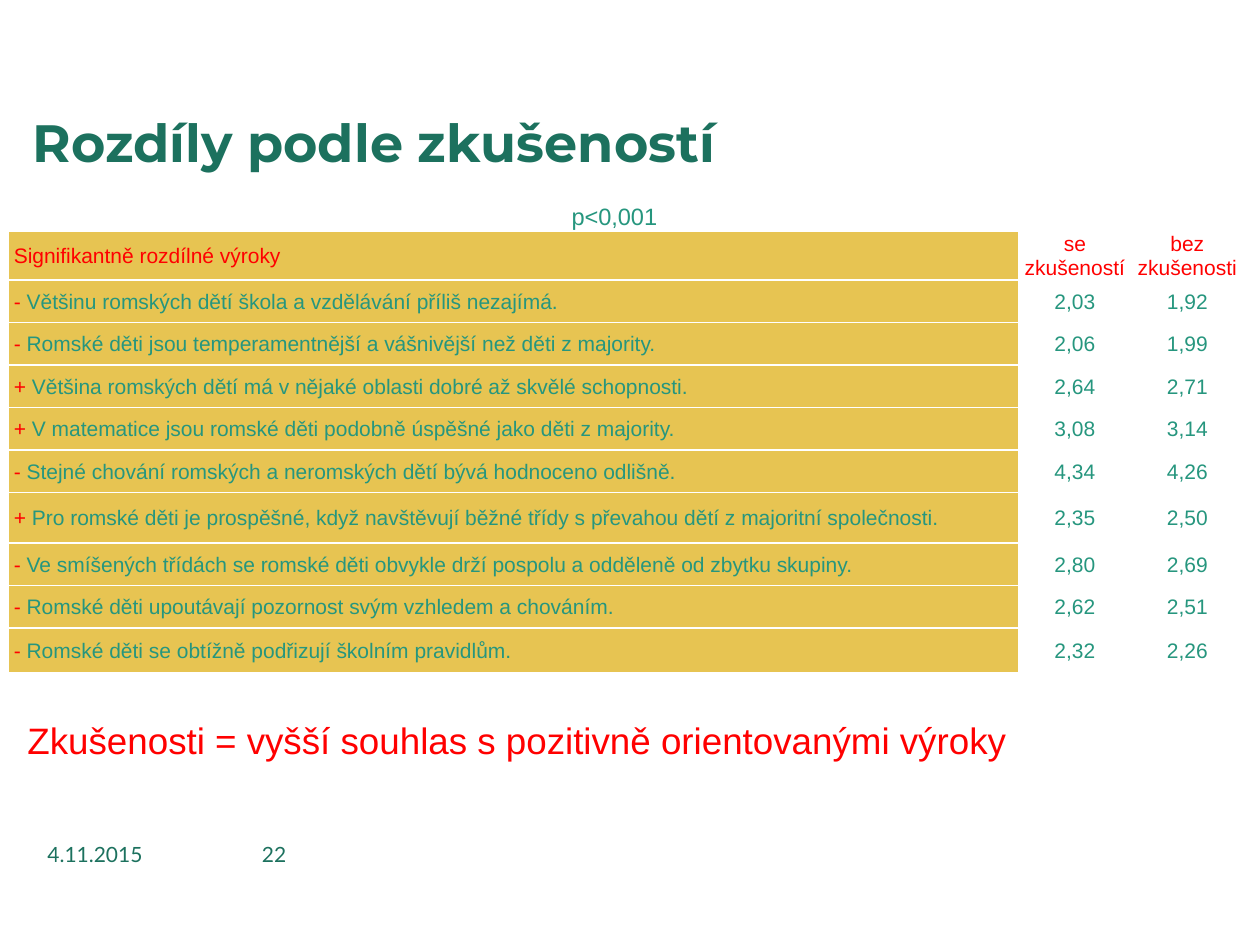
import lxml.etree
import pptx
import pptx.dml.color
import pptx.enum.text
import pptx.oxml.ns
import pptx.util

Pt = pptx.util.Pt
RGBColor = pptx.dml.color.RGBColor
ALIGN = pptx.enum.text.PP_ALIGN
MIDDLE = pptx.enum.text.MSO_ANCHOR.MIDDLE
NO_FIT = pptx.enum.text.MSO_AUTO_SIZE.NONE
qn = pptx.oxml.ns.qn

GREEN = RGBColor(0x1C, 0x71, 0x5E)
TEAL = RGBColor(0x26, 0x96, 0x7E)
RED = RGBColor(0xFF, 0x00, 0x00)
GOLD = RGBColor(0xE7, 0xC4, 0x52)
WHITE = RGBColor(0xFF, 0xFF, 0xFF)

COLUMN_WIDTHS = (577.5, 64.5, 64)
ROW_HEIGHTS = (27.5, *[24.3] * 5, 28.8, 24.3, 24.3, 25.5)
HEADER = ("Signifikantně rozdílné výroky", "se zkušeností", "bez zkušenosti")
STATEMENTS = (
    ("-", "Většinu romských dětí škola a vzdělávání příliš nezajímá.", "2,03", "1,92"),
    ("-", "Romské děti jsou temperamentnější a vášnivější než děti z majority.", "2,06", "1,99"),
    ("+", "Většina romských dětí má v nějaké oblasti dobré až skvělé schopnosti.", "2,64", "2,71"),
    ("+", "V matematice jsou romské děti podobně úspěšné jako děti z majority.", "3,08", "3,14"),
    ("-", "Stejné chování romských a neromských dětí bývá hodnoceno odlišně.", "4,34", "4,26"),
    ("+", "Pro romské děti je prospěšné, když navštěvují běžné třídy s převahou dětí "
     "z majoritní společnosti.", "2,35", "2,50"),
    ("-", "Ve smíšených třídách se romské děti obvykle drží pospolu a odděleně od zbytku skupiny.",
     "2,80", "2,69"),
    ("-", "Romské děti upoutávají pozornost svým vzhledem a chováním.", "2,62", "2,51"),
    ("-", "Romské děti se obtížně podřizují školním pravidlům.", "2,32", "2,26"),
)


def format_paragraph(p, size, color, name="Arial", bold=False, align=ALIGN.LEFT):
    """Set the alignment and font of a paragraph."""
    p.alignment = align
    p.font.size = Pt(size)
    p.font.name = name
    p.font.bold = bold
    p.font.color.rgb = color


def add_title(s, text, note):
    """Fill the title placeholder with a heading and a centred note."""
    title = s.shapes.title
    title.left, title.top, title.width, title.height = Pt(11.4), Pt(78), Pt(679.4), Pt(38)
    tf = title.text_frame
    tf.auto_size = NO_FIT
    tf.word_wrap = True
    tf.vertical_anchor = MIDDLE
    p = tf.paragraphs[0]
    p.text = text
    format_paragraph(p, 30, GREEN, "Montserrat", True)
    p = tf.add_paragraph()
    p.text = note
    p.space_before = Pt(16.5)
    format_paragraph(p, 13.5, TEAL, align=ALIGN.CENTER)


def add_text(s, text, left, top, width, height, size, color, name="Arial", align=ALIGN.LEFT):
    """Add a one-paragraph text box."""
    tf = s.shapes.add_textbox(Pt(left), Pt(top), Pt(width), Pt(height)).text_frame
    tf.word_wrap = True
    tf.vertical_anchor = MIDDLE
    p = tf.paragraphs[0]
    p.text = text
    format_paragraph(p, size, color, name, align=align)


def set_borders(cell):
    """Draw thin white cell borders."""
    properties = cell._tc.get_or_add_tcPr()
    for side in "LRTB":
        line = lxml.etree.SubElement(properties, qn(f"a:ln{side}"), w=str(Pt(1)))
        fill = lxml.etree.SubElement(line, qn("a:solidFill"))
        lxml.etree.SubElement(fill, qn("a:srgbClr"), val=str(WHITE))


def fill_cell(cell, text, color, fill, align, margin, sign=""):
    """Write and format a cell, with an optional red sign before its text."""
    set_borders(cell)
    cell.fill.solid()
    cell.fill.fore_color.rgb = fill
    cell.vertical_anchor = MIDDLE
    cell.margin_left = cell.margin_right = Pt(margin)
    cell.margin_top = cell.margin_bottom = 0
    p = cell.text_frame.paragraphs[0]
    p.line_spacing = Pt(14)
    format_paragraph(p, 12, color, align=align)
    if sign:
        r = p.add_run()
        r.text = f"{sign} "
        r.font.color.rgb = RED
    p.add_run().text = text


def add_statements(s):
    """Add the table of statements and their mean scores."""
    table = s.shapes.add_table(
        len(ROW_HEIGHTS), len(COLUMN_WIDTHS), Pt(4.5), Pt(132),
        Pt(sum(COLUMN_WIDTHS)), Pt(sum(ROW_HEIGHTS))).table
    for column, width in zip(table.columns, COLUMN_WIDTHS):
        column.width = Pt(width)
    for row, height in zip(table.rows, ROW_HEIGHTS):
        row.height = Pt(height)
    score_style = (WHITE, ALIGN.CENTER, 2)
    styles = ((GOLD, ALIGN.LEFT, 3.4), score_style, score_style)
    for i, (text, style) in enumerate(zip(HEADER, styles)):
        fill_cell(table.cell(0, i), text, RED, *style)
    for row, (sign, *texts) in enumerate(STATEMENTS, 1):
        for i, (text, style) in enumerate(zip(texts, styles)):
            fill_cell(table.cell(row, i), text, TEAL, *style, sign="" if i else sign)


def main():
    """Build and save the slide."""
    prs = pptx.Presentation()
    prs.slide_width, prs.slide_height = Pt(720), Pt(540)
    s = prs.slides.add_slide(prs.slide_layouts[5])
    add_title(s, "Rozdíly podle zkušeností", "p<0,001")
    add_statements(s)
    add_text(s, "Zkušenosti = vyšší souhlas s pozitivně orientovanými výroky",
             8.6, 406.4, 640, 32.4, 21, RED)
    add_text(s, "4.11.2015", 20, 479.5, 96, 17.3, 12, GREEN, "Lato")
    add_text(s, "22", 116, 479.5, 54.7, 17.3, 12, GREEN, "Lato", ALIGN.RIGHT)
    prs.save("out.pptx")


if __name__ == "__main__":
    main()
